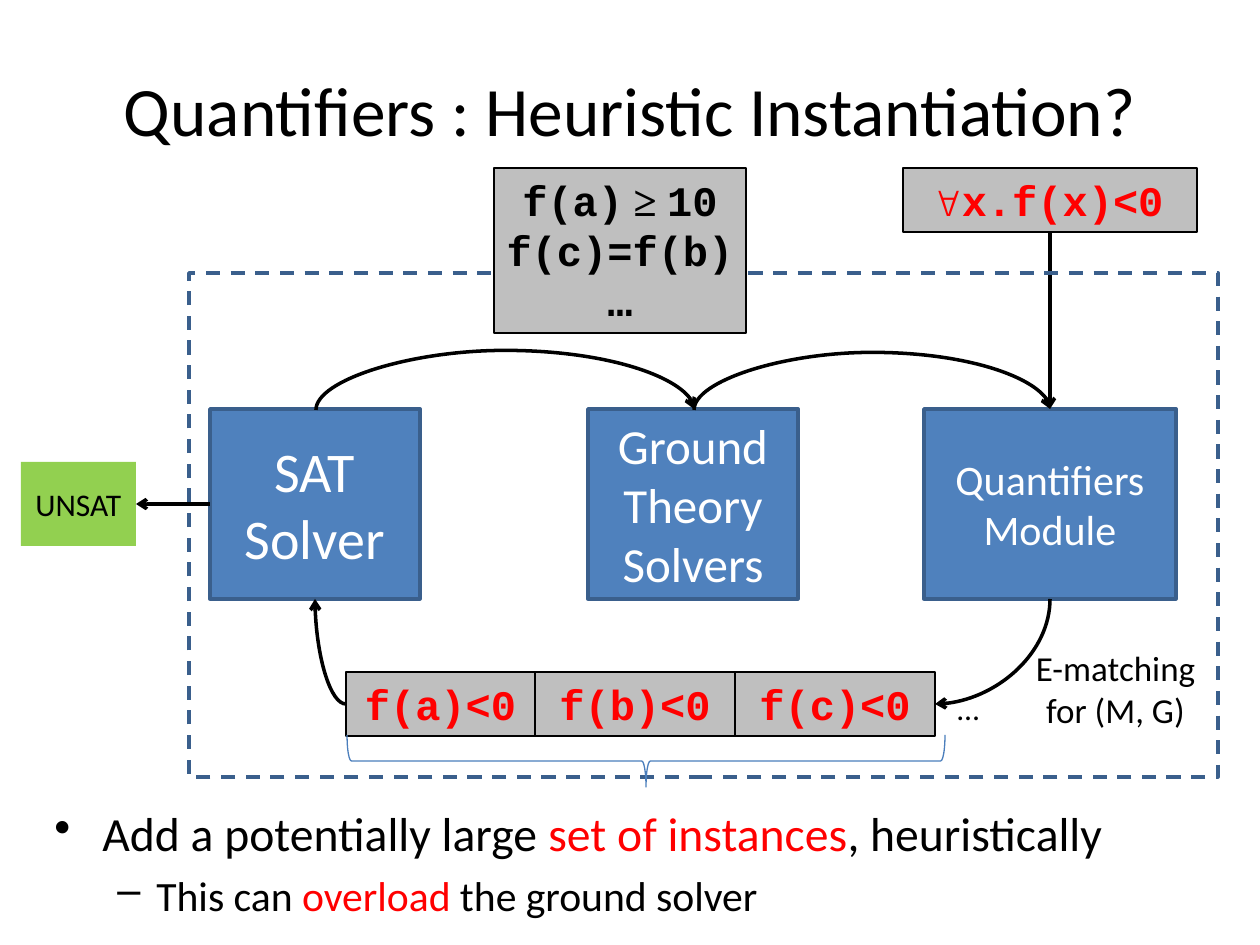
"""Build the slide on heuristic quantifier instantiation."""
import dataclasses
import math

import lxml.etree
import pptx
import pptx.dml.color
import pptx.enum.dml
import pptx.enum.shapes
import pptx.enum.text
import pptx.oxml.ns
import pptx.util

PX = 914400 / 126
qn = pptx.oxml.ns.qn
Preset = pptx.enum.shapes.MSO_SHAPE
Connector = pptx.enum.shapes.MSO_CONNECTOR
Align = pptx.enum.text.PP_ALIGN
Anchor = pptx.enum.text.MSO_ANCHOR


@dataclasses.dataclass(frozen=True)
class Theme:
    """Colours, fonts and type sizes of the slide."""
    ink: str = "000000"
    accent: str = "FF0000"
    white: str = "FFFFFF"
    module: str = "4F81BD"
    module_edge: str = "3A5F8C"
    brace: str = "4B7EBC"
    formula: str = "BFBFBF"
    result: str = "92D050"
    sans: str = "Calibri"
    mono: str = "Courier New"
    serif: str = "Times New Roman"
    title: float = 39.6
    bullet: float = 27.2
    sub_bullet: float = 23.8
    code: float = 24
    note: float = 20
    small: float = 18
    thin: float = 0.75
    thick: float = 2


THEME = Theme()


def px(length):
    """Turn px into EMU."""
    return pptx.util.Emu(round(length * PX))


def rgb(colour):
    """Turn a hex string into a colour."""
    return pptx.dml.color.RGBColor.from_string(colour)


def style_font(font, size, colour, name=THEME.sans, bold=False):
    """Set the face, size, weight and colour of a font."""
    font.name, font.size, font.bold = name, pptx.util.Pt(size), bold
    font.color.rgb = rgb(colour)


def write(frame, lines, size, colour, name=THEME.sans, bold=False,
          align=Align.CENTER, anchor=Anchor.MIDDLE, wrap=True):
    """Fill a text frame with one uniformly styled paragraph per line."""
    frame.word_wrap = wrap
    frame.vertical_anchor = anchor
    frame.text = "\n".join(lines)
    for paragraph in frame.paragraphs:
        paragraph.alignment = align
        style_font(paragraph.font, size, colour, name, bold)


def add_box(slide, box, fill=None, edge=None, width=THEME.thin, preset=Preset.RECTANGLE):
    """Add a flat preset shape with an optional fill and outline."""
    shape = slide.shapes.add_shape(preset, *map(px, box))
    shape.shadow.inherit = False
    if fill:
        shape.fill.solid()
        shape.fill.fore_color.rgb = rgb(fill)
    else:
        shape.fill.background()
    if edge:
        shape.line.color.rgb = rgb(edge)
        shape.line.width = pptx.util.Pt(width)
    else:
        shape.line.fill.background()
    return shape


def add_module(slide, left, width, lines, size):
    """Add a solver module in the middle row."""
    module = add_box(slide, (left, 409, width, 190), THEME.module, THEME.module_edge, THEME.thick)
    write(module.text_frame, lines, size, THEME.white)


def add_formula(slide, box, lines, colour=THEME.accent):
    """Add a grey box of formulas and return its text frame."""
    frame = add_box(slide, box, THEME.formula, THEME.ink).text_frame
    write(frame, lines, THEME.code, colour, THEME.mono, True, anchor=Anchor.TOP, wrap=False)
    return frame


def add_label(slide, box, lines, size, align):
    """Add a free-standing label."""
    label = slide.shapes.add_textbox(*map(px, box))
    write(label.text_frame, lines, size, THEME.ink, align=align, anchor=Anchor.TOP, wrap=False)


def add_arrow(slide, start, end, kind=Connector.STRAIGHT):
    """Add a connector with an open arrowhead at its end."""
    arrow = slide.shapes.add_connector(kind, *map(px, (*start, *end)))
    arrow.line.color.rgb = rgb(THEME.ink)
    arrow.line.width = pptx.util.Pt(THEME.thick)
    properties = arrow.element.spPr
    lxml.etree.SubElement(properties.find(qn("a:ln")), qn("a:tailEnd"), type="arrow")
    lxml.etree.SubElement(properties, qn("a:effectLst"))
    return properties


def add_curve(slide, start, end, turn, rise=None):
    """Add a curved arrow turned by some degrees: an arc if it has a rise, else a bend."""
    cos, sin = round(math.cos(math.radians(turn))), round(math.sin(math.radians(turn)))
    dx, dy = end[0] - start[0], end[1] - start[1]
    half = ((dx * cos + dy * sin) / 2, (dy * cos - dx * sin) / 2)
    middle = ((start[0] + end[0]) / 2, (start[1] + end[1]) / 2)
    properties = add_arrow(slide, [m - h for m, h in zip(middle, half)],
                           [m + h for m, h in zip(middle, half)], Connector.CURVE)
    properties.find(qn("a:xfrm")).set("rot", str(turn * 60000))
    geometry = properties.find(qn("a:prstGeom"))
    if rise is None:
        geometry.set("prst", "curvedConnector2")
    else:
        adjustment = round(rise / abs(2 * half[0]) * 100000)
        lxml.etree.SubElement(geometry.find(qn("a:avLst")), qn("a:gd"),
                              name="adj1", fmla=f"val {adjustment}")


def add_bullet(paragraph, level, mark, margin, hang, size, parts):
    """Write a bulleted line whose middle part is stressed."""
    paragraph.level = level
    paragraph.space_before = pptx.util.Pt(round(size * 0.2, 1))
    style_font(paragraph.font, size, THEME.ink)
    properties = paragraph._p.get_or_add_pPr()
    properties.set("marL", str(px(margin)))
    properties.set("indent", str(px(-hang)))
    bullet = lxml.etree.Element(qn("a:buChar"), char=mark)
    properties.find(qn("a:defRPr")).addprevious(bullet)
    for part, colour in zip(parts, (THEME.ink, THEME.accent, THEME.ink)):
        run = paragraph.add_run()
        run.text = part
        run.font.color.rgb = rgb(colour)


def add_conclusion(slide):
    """Add the bulleted conclusion below the diagram."""
    frame = slide.shapes.add_textbox(*map(px, (42, 798, 1155, 126))).text_frame
    frame.word_wrap = True
    add_bullet(frame.paragraphs[0], 0, "•", 48, 48, THEME.bullet,
               ("Add a potentially large ", "set of instances", ", heuristically"))
    add_bullet(frame.add_paragraph(), 1, "–", 102, 39, THEME.sub_bullet,
               ("This can ", "overload", " the ground solver"))


def add_ground_formulas(slide):
    """Add the ground constraints, with the relation sign in a serif face."""
    frame = add_formula(slide, (494, 168, 252, 165), ("", "f(c)=f(b)", "…"), THEME.ink)
    for part, name in (("f(a)", THEME.mono), (" ≥ ", THEME.serif), ("10", THEME.mono)):
        run = frame.paragraphs[0].add_run()
        run.text, run.font.name = part, name


def main():
    """Build and save the slide."""
    deck = pptx.Presentation()
    deck.slide_width, deck.slide_height = px(1260), px(945)
    slide = deck.slides.add_slide(deck.slide_layouts[5])
    title = slide.shapes.title
    title.left, title.top, title.width, title.height = map(px, (63, 38, 1134, 141))
    write(title.text_frame, ["Quantifiers : Heuristic Instantiation?"], THEME.title, THEME.ink)

    add_module(slide, 210, 210, ["SAT Solver"], 32)
    add_module(slide, 588, 210, ["Ground", "Theory Solvers"], 28)
    add_module(slide, 924, 252, ["Quantifiers Module"], 24)
    add_arrow(slide, (1050, 232), (1050, 409))
    add_formula(slide, (903, 168, 294, 64), ["∀x.f(x)<0"])
    loop = add_box(slide, (189, 273, 1029, 504), edge=THEME.module_edge, width=THEME.thick)
    loop.line.dash_style = pptx.enum.dml.MSO_LINE.DASH

    add_curve(slide, (316, 410), (694, 409), 90, rise=60)
    add_curve(slide, (694, 410), (1050, 409), 90, rise=58)
    unsat = add_box(slide, (21, 462, 115, 84), THEME.result)
    write(unsat.text_frame, ["UNSAT"], THEME.small, THEME.ink, wrap=False)
    add_arrow(slide, (210, 504), (136, 504))
    add_curve(slide, (1050, 599), (935, 704), 90)
    add_label(slide, (1018, 640, 195, 97), ["E-matching", "for (M, G)"], THEME.note, Align.CENTER)

    for name, left, width in (("a", 346, 189), ("b", 535, 200), ("c", 735, 200)):
        add_formula(slide, (left, 672, width, 64), [f"f({name})<0"])
    add_curve(slide, (346, 704), (315, 599), 180)
    add_label(slide, (945, 683, 48, 50), ["…"], THEME.small, Align.LEFT)
    add_conclusion(slide)
    brace = add_box(slide, (620, 462, 52, 598), edge=THEME.brace, preset=Preset.RIGHT_BRACE)
    brace.rotation = 90
    add_ground_formulas(slide)
    deck.save("out.pptx")


if __name__ == "__main__":
    main()
